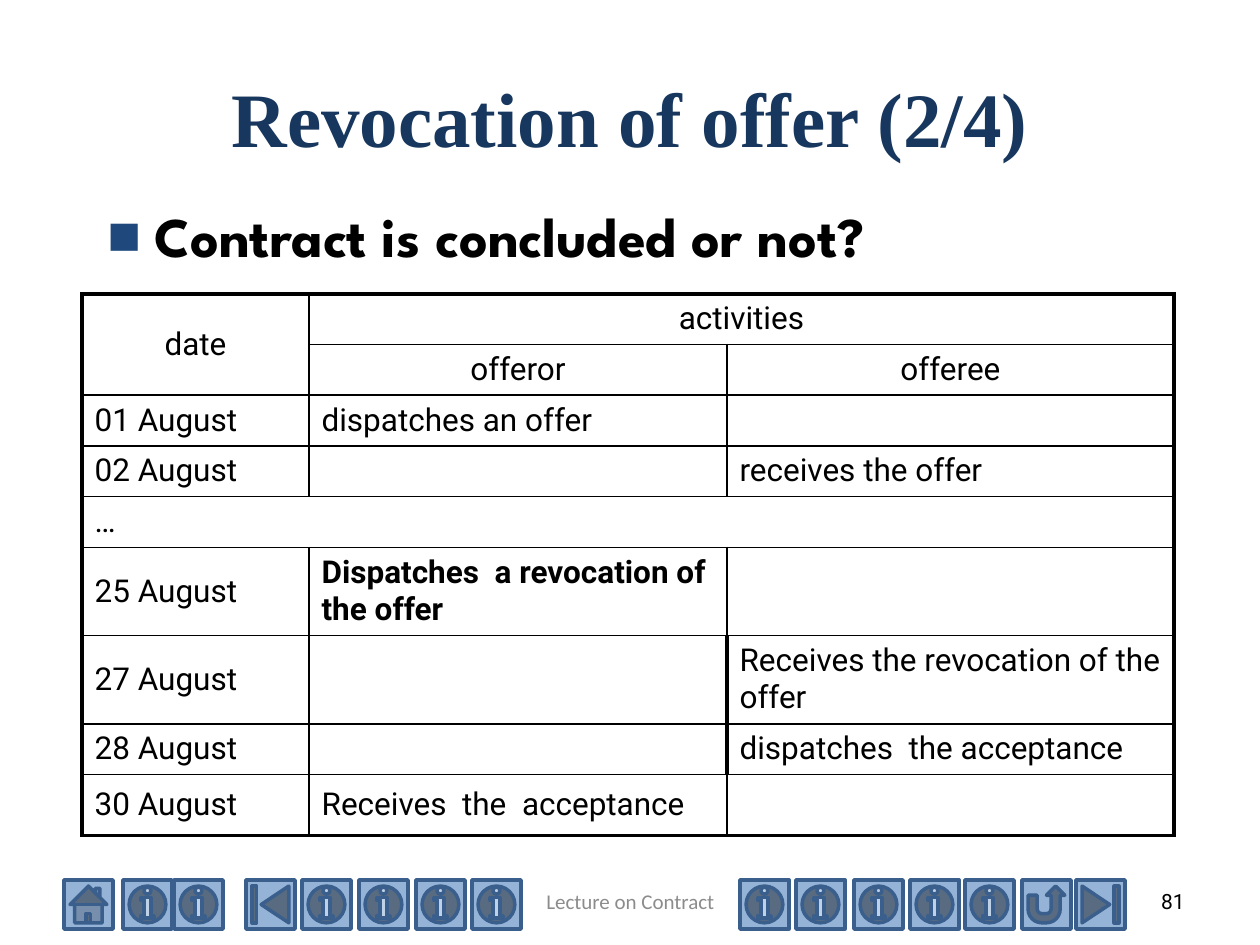
from lxml.etree import SubElement
from pptx import Presentation
from pptx.dml.color import RGBColor
from pptx.enum.shapes import MSO_SHAPE
from pptx.enum.text import MSO_ANCHOR, PP_ALIGN
from pptx.oxml.ns import qn
from pptx.util import Emu, Pt

PX_PER_INCH = 126
COLORS = {
    "title": "17375E",
    "bullet": "1F497D",
    "text": "000000",
    "footer": "8C8C8C",
    "button": "95B3D7",
    "button_line": "3A5F8C",
    "paper": "FFFFFF",
}
COLUMN_WIDTHS = [227, 418, 447]
ROW_HEIGHTS = [50, 50, 51, 50, 51, 88, 88, 50, 61]
HEADER_ROWS = 2
ROWS = [
    ["date", "activities", ""],
    ["", "offeror", "offeree"],
    ["01 August", "dispatches an offer", ""],
    ["02 August", "", "receives the offer"],
    ["…", "", ""],
    ["25 August", "Dispatches  a revocation of the offer", ""],
    ["27 August", "", "Receives the revocation of the offer"],
    ["28 August", "", "dispatches  the acceptance"],
    ["30 August", "Receives  the  acceptance", ""],
]
MERGES = [((0, 0), (1, 0)), ((0, 1), (0, 2)), ((4, 0), (4, 2))]
BOLD_CELL = (5, 1)
HEAVY_LEFT_CELLS = [(6, 2), (7, 2)]
THIN, HEAVY = 1, 2.25
NO_STYLE = "{2D5ABB26-0587-4C30-8999-92F81FD0307C}"

BUTTON_TOP, BUTTON_SIZE = 880, 49
NAVIGATION = [
    (MSO_SHAPE.ACTION_BUTTON_HOME, [64]),
    (MSO_SHAPE.ACTION_BUTTON_BEGINNING, [246]),
    (MSO_SHAPE.ACTION_BUTTON_INFORMATION,
     [123, 174, 302, 359, 416, 472, 740, 796, 854, 910, 965]),
    (MSO_SHAPE.ACTION_BUTTON_RETURN, [1022]),
    (MSO_SHAPE.ACTION_BUTTON_END, [1076]),
]


def px(length):
    return Emu(round(length * 914400 / PX_PER_INCH))


def rgb(name):
    return RGBColor.from_string(COLORS[name])


def style_paragraph(paragraph, font_name, size, color, bold=False, align=PP_ALIGN.LEFT):
    paragraph.alignment = align
    for run in paragraph.runs:
        run.font.name = font_name
        run.font.size = Pt(size)
        run.font.bold = bold
        run.font.color.rgb = rgb(color)


def add_text(slide, text, box, anchor=MSO_ANCHOR.MIDDLE, **style):
    frame = slide.shapes.add_textbox(*map(px, box)).text_frame
    frame.word_wrap = True
    frame.vertical_anchor = anchor
    frame.text = text
    style_paragraph(frame.paragraphs[0], **style)
    return frame.paragraphs[0]


def add_square_bullet(paragraph, indent):
    properties = paragraph._p.get_or_add_pPr()
    properties.set("marL", str(px(indent)))
    properties.set("indent", str(-px(indent)))
    color = SubElement(properties, qn("a:buClr"))
    SubElement(color, qn("a:srgbClr"), val=COLORS["bullet"])
    SubElement(properties, qn("a:buFont"), typeface="Arial")
    SubElement(properties, qn("a:buChar"), char="■")


def add_button(slide, kind, left):
    button = slide.shapes.add_shape(
        kind, px(left), px(BUTTON_TOP), px(BUTTON_SIZE), px(BUTTON_SIZE))
    button.shadow.inherit = False
    button.fill.solid()
    button.fill.fore_color.rgb = rgb("button")
    button.line.color.rgb = rgb("button_line")
    button.line.width = Pt(2)


def set_borders(cell, row, column):
    """Heavy lines on the table's outer edge and beside the marked cells."""
    heavy = {
        "a:lnL": column == 0 or (row, column) in HEAVY_LEFT_CELLS,
        "a:lnR": column + cell.span_width == len(COLUMN_WIDTHS),
        "a:lnT": row == 0,
        "a:lnB": row + cell.span_height == len(ROW_HEIGHTS),
    }
    properties = cell._tc.get_or_add_tcPr()
    for edge, is_heavy in heavy.items():
        width = Pt(HEAVY if is_heavy else THIN)
        line = SubElement(properties, qn(edge), w=str(width))
        fill = SubElement(line, qn("a:solidFill"))
        SubElement(fill, qn("a:srgbClr"), val=COLORS["text"])


def fill_cell(cell, row, column):
    cell.vertical_anchor = MSO_ANCHOR.MIDDLE
    cell.text = ROWS[row][column]
    align = PP_ALIGN.CENTER if row < HEADER_ROWS else PP_ALIGN.LEFT
    style_paragraph(cell.text_frame.paragraphs[0], "Roboto", 18, "text",
                    bold=(row, column) == BOLD_CELL, align=align)
    set_borders(cell, row, column)
    cell.fill.solid()
    cell.fill.fore_color.rgb = rgb("paper")


def add_timeline_table(slide, left, top):
    table = slide.shapes.add_table(
        len(ROW_HEIGHTS), len(COLUMN_WIDTHS), px(left), px(top),
        px(sum(COLUMN_WIDTHS)), px(sum(ROW_HEIGHTS))).table
    table.first_row = table.horz_banding = False
    table._tbl.tblPr.find(qn("a:tableStyleId")).text = NO_STYLE
    for column, width in zip(table.columns, COLUMN_WIDTHS):
        column.width = px(width)
    for row, height in zip(table.rows, ROW_HEIGHTS):
        row.height = px(height)
    for first, last in MERGES:
        table.cell(*first).merge(table.cell(*last))
    for row in range(len(ROW_HEIGHTS)):
        for column in range(len(COLUMN_WIDTHS)):
            cell = table.cell(row, column)
            if not cell.is_spanned:
                fill_cell(cell, row, column)


def main():
    presentation = Presentation()
    presentation.slide_width, presentation.slide_height = px(1260), px(945)
    slide = presentation.slides.add_slide(presentation.slide_layouts[6])

    for kind, lefts in NAVIGATION:
        for left in lefts:
            add_button(slide, kind, left)

    add_text(slide, "Revocation of offer (2/4)", (63, 38, 1134, 158),
             font_name="Times New Roman", size=44, color="title", bold=True,
             align=PP_ALIGN.CENTER)
    question = add_text(slide, "Contract is concluded or not?", (95, 195, 1071, 89),
                        anchor=MSO_ANCHOR.TOP, font_name="League Spartan", size=32,
                        color="text", bold=True)
    question.space_before = Pt(6.4)
    add_square_bullet(question, 47)

    add_timeline_table(slide, 82, 294)

    add_text(slide, "Lecture on Contract", (431, 876, 399, 50),
             font_name="Calibri", size=12, color="footer", align=PP_ALIGN.CENTER)
    add_text(slide, "81", (903, 876, 294, 50),
             font_name="Roboto", size=12, color="text", align=PP_ALIGN.RIGHT)

    presentation.save("out.pptx")


if __name__ == "__main__":
    main()
